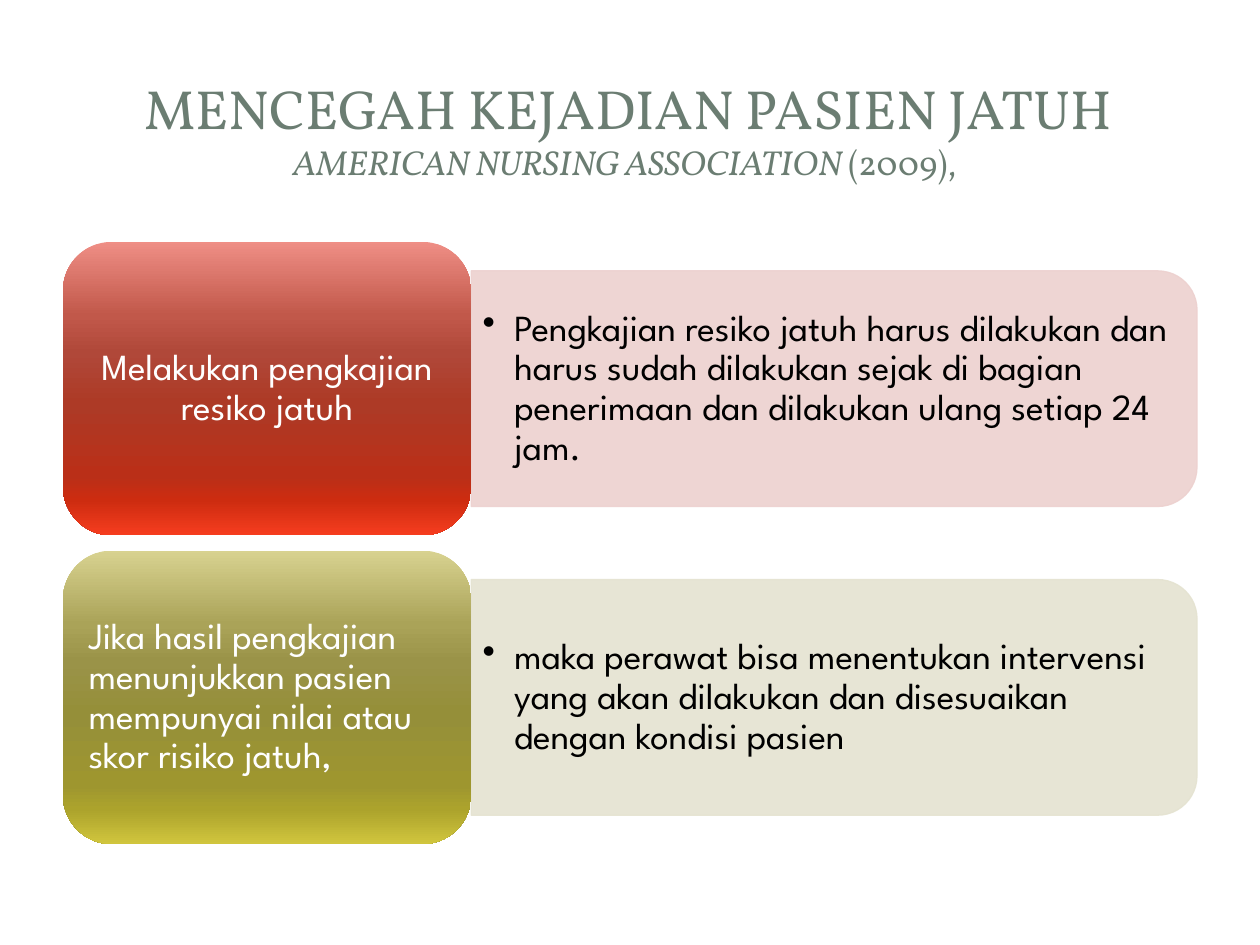
from lxml import etree
from pptx import Presentation
from pptx.dml.color import RGBColor
from pptx.enum import shapes, text
from pptx.oxml import ns
from pptx.util import Inches, Pt

TITLE_FONT, BODY_FONT = "Vollkorn", "League Spartan"
TITLE_COLOR = "6B7D72"
STOPS = (0, 25, 38, 55, 80, 88, 100)
TOP, PITCH = 1.92, 2.45
LABEL_LEFT, LABEL_WIDTH, LABEL_HEIGHT = 0.5, 3.24, 2.33
PANEL_WIDTH, PANEL_HEIGHT = 5.76, 1.87

# Label, its alignment, detail, panel colour, label gradient
ROWS = [
    ("Melakukan pengkajian resiko jatuh", text.PP_ALIGN.CENTER,
     "Pengkajian resiko jatuh harus dilakukan dan harus sudah dilakukan "
     "sejak di bagian penerimaan dan dilakukan ulang setiap 24 jam.",
     "EDD1CF",
     ("EF8E85", "C1584A", "B04839", "AD3A26", "BA2F18", "CD2C10", "F63D1F")),
    ("Jika hasil pengkajian menunjukkan pasien mempunyai nilai atau "
     "skor risiko jatuh,", text.PP_ALIGN.LEFT,
     "maka perawat bisa menentukan intervensi yang akan dilakukan dan "
     "disesuaikan dengan kondisi pasien",
     "E5E3D1",
     ("D8D290", "AAA358", "9A9348", "958F39", "9E962F", "ACA32C", "D0C53D")),
]


def color(value):
    return RGBColor.from_string(value)


def child(parent, tag, **attributes):
    return etree.SubElement(parent, ns.qn(tag), attributes)


def set_frame(shape, x_inset=0.09, y_inset=0.04):
    frame = shape.text_frame
    settings = {
        "word_wrap": True,
        "vertical_anchor": text.MSO_ANCHOR.MIDDLE,
        "margin_left": Inches(x_inset), "margin_right": Inches(x_inset),
        "margin_top": Inches(y_inset), "margin_bottom": Inches(y_inset),
    }
    for name, value in settings.items():
        setattr(frame, name, value)
    return frame.paragraphs[0]


def add_span(para, words, size, font, fill, italic=False):
    span = para.add_run()
    span.text = words
    settings = {"size": Pt(size), "name": font, "italic": italic}
    for name, value in settings.items():
        setattr(span.font, name, value)
    span.font.color.rgb = color(fill)


def add_title(page):
    box = page.shapes.add_textbox(
        Inches(0.47), Inches(0.45), Inches(9.03), Inches(1.14))
    para = set_frame(box, 0.1, 0.05)
    para.alignment = text.PP_ALIGN.CENTER
    for words, size, italic in (
            ("MENCEGAH KEJADIAN PASIEN JATUH ", 31.5, False),
            ("AMERICAN NURSING ASSOCIATION", 19.8, True),
            (" (2009), ", 19.8, False)):
        add_span(para, words, size, TITLE_FONT, TITLE_COLOR, italic)


def add_panel(page, left, middle, fill):
    # The shape is drawn upright, then turned so its round side faces right
    panel = page.shapes.add_shape(
        shapes.MSO_SHAPE.ROUND_2_SAME_RECTANGLE,
        Inches(left + (PANEL_WIDTH - PANEL_HEIGHT) / 2),
        Inches(middle - PANEL_WIDTH / 2),
        Inches(PANEL_HEIGHT), Inches(PANEL_WIDTH))
    panel.rotation = 90
    panel.shadow.inherit = False
    panel.line.width = Pt(0.75)
    for paint in (panel.fill, panel.line.fill):
        paint.solid()
        paint.fore_color.rgb = color(fill)
    for tone in panel.element.spPr.iter(ns.qn("a:srgbClr")):
        child(tone, "a:alpha", val="90000")


def add_detail(page, left, middle, words):
    height = 1.68
    box = page.shapes.add_textbox(
        Inches(left), Inches(middle - height / 2), Inches(5.67), Inches(height))
    para = set_frame(box)
    para.line_spacing = 0.9
    add_span(para, words, 21, BODY_FONT, "000000")
    # Hanging bullet
    props = para._p.get_or_add_pPr()
    props.set("marL", str(Inches(0.25)))
    props.set("indent", str(-Inches(0.25)))
    child(props, "a:buChar", char="•")


def add_label(page, top, words, alignment, tones):
    label = page.shapes.add_shape(
        shapes.MSO_SHAPE.ROUNDED_RECTANGLE, Inches(LABEL_LEFT), Inches(top),
        Inches(LABEL_WIDTH), Inches(LABEL_HEIGHT))
    label.shadow.inherit = False
    label.line.fill.background()
    # Gradient from top to bottom
    label.fill.gradient()
    label.fill.gradient_angle = 270
    stops = label.element.spPr.find(".//" + ns.qn("a:gsLst"))
    for stop in list(stops):
        stops.remove(stop)
    for position, tone in zip(STOPS, tones):
        stop = child(stops, "a:gs", pos=str(position * 1000))
        child(stop, "a:srgbClr", val=tone)
    para = set_frame(label)
    para.alignment = alignment
    para.line_spacing = 0.9
    add_span(para, words, 21, BODY_FONT, "FFFFFF")


def main():
    deck = Presentation()
    deck.slide_width, deck.slide_height = Inches(10), Inches(7.5)
    page = deck.slides.add_slide(deck.slide_layouts[6])
    add_title(page)
    # One row per step: panel, detail text, label
    left = LABEL_LEFT + LABEL_WIDTH
    for index, (label, alignment, detail, fill, tones) in enumerate(ROWS):
        top = TOP + index * PITCH
        middle = top + LABEL_HEIGHT / 2
        add_panel(page, left, middle, fill)
        add_detail(page, left, middle, detail)
        add_label(page, top, label, alignment, tones)
    deck.save("out.pptx")


if __name__ == "__main__":
    main()
